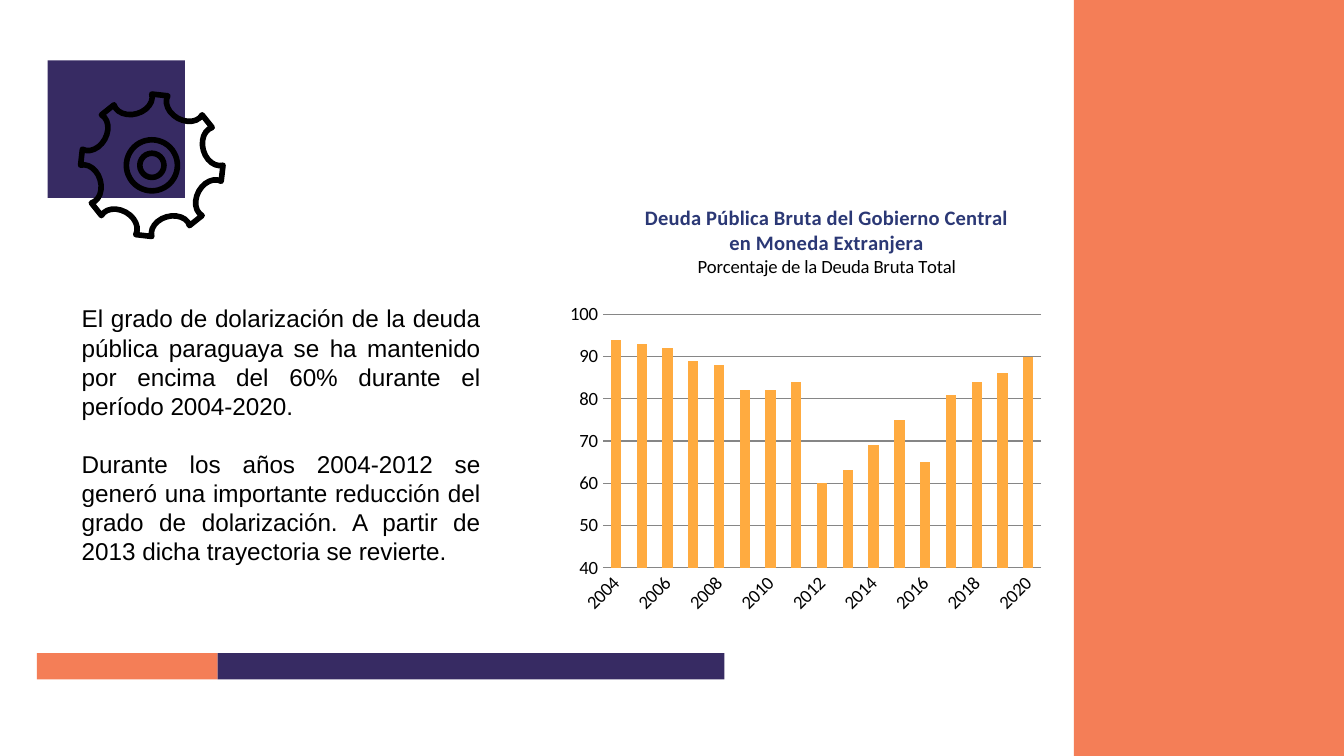
from math import cos, pi, radians, sin

from lxml import etree
from pptx import Presentation
from pptx.chart.data import CategoryChartData
from pptx.dml.color import RGBColor
from pptx.enum.chart import XL_CHART_TYPE, XL_TICK_MARK
from pptx.enum.shapes import MSO_SHAPE
from pptx.enum.text import PP_ALIGN
from pptx.oxml import parse_xml
from pptx.oxml.ns import nsdecls, qn
from pptx.util import Inches, Pt

RECT, OVAL = MSO_SHAPE.RECTANGLE, MSO_SHAPE.OVAL
COLUMNS = XL_CHART_TYPE.COLUMN_CLUSTERED
NO_TICK = XL_TICK_MARK.NONE
JUSTIFY = PP_ALIGN.JUSTIFY

W = 10
H = W * 9 / 16
CORAL, PURPLE, BLACK = "F47E57", "372B63", "000000"
NAVY, AMBER, GREY = "2B3875", "FFAB40", "868686"

PARAGRAPHS = [
    "El grado de dolarización de la deuda pública paraguaya se ha mantenido "
    "por encima del 60% durante el período 2004-2020.",
    "Durante los años 2004-2012 se generó una importante reducción del grado "
    "de dolarización. A partir de 2013 dicha trayectoria se revierte.",
]
TITLE = [
    ("Deuda Pública Bruta del Gobierno Central en Moneda Extranjera", 11, True, NAVY),
    ("Porcentaje de la Deuda Bruta Total", 10, False, BLACK),
]
DEBT_SHARE = [94, 93, 92, 89, 88, 82, 82, 84, 60, 63, 69, 75, 65, 81, 84, 86, 90]


def rgb(color):
    return RGBColor.from_string(color)


def box(x, y, w, h):
    """Percent of the slide's width and height to lengths."""
    return [Inches(v * side / 100) for v, side in zip((x, y, w, h), (W, H, W, H))]


def set_font(font, size, color, name, bold=False):
    font.size, font.name, font.bold = Pt(size), name, bold
    font.color.rgb = rgb(color)


def add_run(p, text, size, color, name, bold=False):
    r = p.add_run()
    r.text = text
    set_font(r.font, size, color, name, bold)


def add_block(s, area, color):
    sp = s.shapes.add_shape(RECT, *box(*area))
    sp.shadow.inherit = False
    sp.fill.solid()
    sp.fill.fore_color.rgb = rgb(color)
    sp.line.fill.background()


def outline(sp):
    sp.shadow.inherit = False
    sp.fill.background()
    sp.line.color.rgb = rgb(BLACK)
    sp.line.width = Pt(3)
    etree.SubElement(sp.line._get_or_add_ln(), qn("a:round"))


def add_gear(s, cx, cy, radius, teeth=8, turn=6.5, half_tooth=6.5, depth=0.11):
    # Each tooth ends in a flat top, followed by a half-ellipse valley
    step = 360 / teeth
    half_gap = radians(step / 2 - half_tooth)
    points = []
    for k in range(teeth):
        mid = radians(turn + (k + 0.5) * step)
        for i in range(13):
            t = pi * i / 12
            along = -radius * sin(half_gap) * cos(t)
            out = radius * cos(half_gap) - depth * sin(t)
            points.append((Inches(cx + out * sin(mid) + along * cos(mid)),
                           Inches(cy - out * cos(mid) + along * sin(mid))))
    builder = s.shapes.build_freeform(*points[0])
    builder.add_line_segments(points[1:], close=True)
    outline(builder.convert_to_shape())
    # Hub rings
    for r in (0.19, 0.09):
        outline(s.shapes.add_shape(
            OVAL, *[Inches(v) for v in (cx - r, cy - r, 2 * r, 2 * r)]))


def add_body(s, area, paragraphs):
    tf = s.shapes.add_textbox(*box(*area)).text_frame
    tf.word_wrap = True
    tf.margin_left = tf.margin_right = tf.margin_top = tf.margin_bottom = Inches(0.1)
    for i, text in enumerate(paragraphs):
        p = tf.add_paragraph() if i else tf.paragraphs[0]
        p.alignment = JUSTIFY
        p.space_after = Pt(15.5)
        add_run(p, text, 13, BLACK, "Arial")


def place(element, before, modes, **percent):
    """Give a chart part a fixed place, in percent of the chart."""
    for old in element.findall(qn("c:layout")):
        element.remove(old)
    values = {**modes, **{k: v / 100 for k, v in percent.items()}}
    parts = "".join(f'<c:{k} val="{v}"/>' for k, v in values.items())
    layout = parse_xml(f'<c:layout {nsdecls("c")}><c:manualLayout>{parts}'
                       '</c:manualLayout></c:layout>')
    element.insert(before, layout)


def style_axis(axis):
    axis.major_tick_mark = axis.minor_tick_mark = NO_TICK
    axis.format.line.fill.background()
    set_font(axis.tick_labels.font, 10, BLACK, "Calibri")


def add_debt_chart(s, area):
    data = CategoryChartData()
    data.categories = [str(year) for year in range(2004, 2021)]
    data.add_series("Series 1", DEBT_SHARE)
    chart = s.shapes.add_chart(COLUMNS, *box(*area), data).chart
    chart.has_legend = False
    set_font(chart.font, 10, BLACK, "Arial")
    edges = {"xMode": "edge", "yMode": "edge"}

    # Title and subtitle
    tf = chart.chart_title.text_frame
    for i, (text, size, bold, color) in enumerate(TITLE):
        p = tf.add_paragraph() if i else tf.paragraphs[0]
        add_run(p, text, size, color, "Calibri", bold)
    chart.chart_title.include_in_layout = False
    place(chart.chart_title._element, 1, edges, x=14.7, y=0.4)

    # Columns
    plot = chart.plots[0]
    plot.gap_width = 150
    plot.vary_by_categories = False
    fill = plot.series[0].format.fill
    fill.solid()
    fill.fore_color.rgb = rgb(AMBER)
    place(plot._element.getparent(), 0, {"layoutTarget": "inner", **edges},
          x=6.9, y=26.3, w=90.8, h=56.9)

    # Axes: every second year, slanted
    years, share = chart.category_axis, chart.value_axis
    style_axis(years)
    style_axis(share)
    share.minimum_scale, share.maximum_scale, share.major_unit = 40, 100, 10
    grid = share.major_gridlines.format.line
    grid.color.rgb = rgb(GREY)
    grid.width = Pt(0.75)
    years._element.find(qn("c:txPr")).find(qn("a:bodyPr")).set("rot", "-2700000")
    skip = parse_xml(f'<c:tickLblSkip {nsdecls("c")} val="2"/>')
    years._element.find(qn("c:noMultiLvlLbl")).addprevious(skip)


def main():
    prs = Presentation()
    prs.slide_width, prs.slide_height = Inches(W), Inches(H)
    s = prs.slides.add_slide(prs.slide_layouts[6])

    # Decoration
    add_block(s, (2.75, 86.4, 13.45, 3.5), CORAL)
    add_block(s, (16.2, 86.4, 37.7, 3.5), PURPLE)
    add_block(s, (3.55, 8, 10.2, 18.2), PURPLE)
    add_gear(s, 1.13, 1.23, 0.53)
    add_block(s, (79.9, 0, 20.1, 100), CORAL)

    # Content
    add_body(s, (5.1, 38.4, 31.6, 45.2), PARAGRAPHS)
    add_debt_chart(s, (42.4, 26.1, 35.9, 58.9))
    prs.save("out.pptx")


if __name__ == "__main__":
    main()
